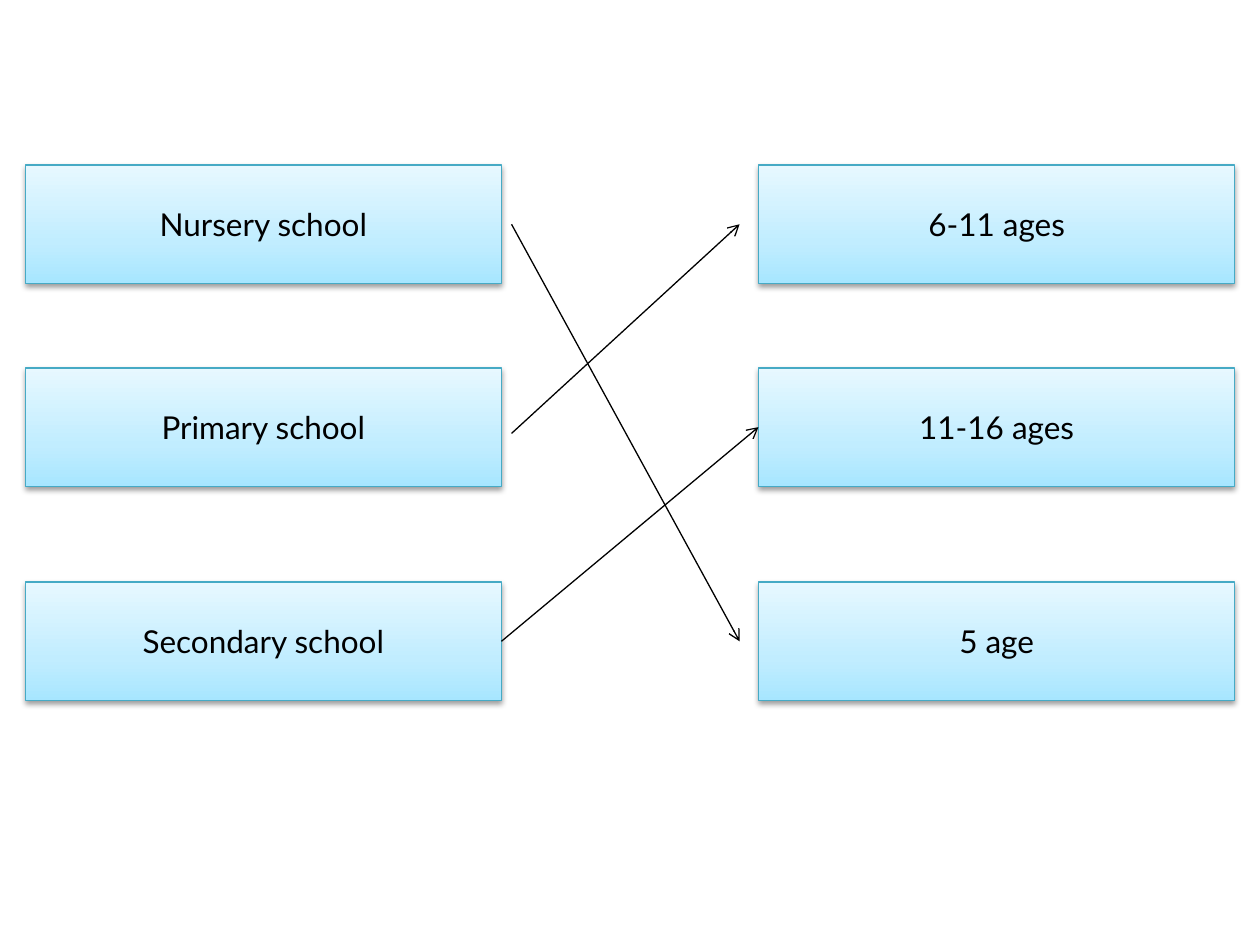
from lxml import etree
from pptx import Presentation
from pptx.dml.color import RGBColor
from pptx.enum.shapes import MSO_CONNECTOR, MSO_SHAPE
from pptx.enum.text import MSO_ANCHOR, PP_ALIGN
from pptx.oxml import parse_xml
from pptx.oxml.ns import nsdecls, qn
from pptx.util import Inches, Pt

RECT = MSO_SHAPE.RECTANGLE
STRAIGHT = MSO_CONNECTOR.STRAIGHT
MIDDLE = MSO_ANCHOR.MIDDLE
CENTER = PP_ALIGN.CENTER

COLORS = {"low": "A7E6FF", "mid": "C1EDFF", "high": "E7F8FF",
          "edge": "46AAC5", "ink": "000000"}
FONT = {"name": "Lato", "size": Pt(18)}
STOPS = {0: "low", 35: "mid", 100: "high"}

prs = Presentation()
prs.slide_width, prs.slide_height = Inches(10), Inches(7.5)
slide = prs.slides.add_slide(prs.slide_layouts[6])

# Box fill and shadow
stops = "".join(f'<a:gs pos="{pos * 1000}"><a:srgbClr val="{COLORS[key]}"/></a:gs>'
                for pos, key in STOPS.items())
FILL = (f'<a:gradFill {nsdecls("a")} rotWithShape="1"><a:gsLst>{stops}</a:gsLst>'
        '<a:lin ang="16200000" scaled="1"/></a:gradFill>')
SHADOW = (f'<a:effectLst {nsdecls("a")}>'
          '<a:outerShdw blurRad="40000" dist="20000" dir="5400000" rotWithShape="0">'
          f'<a:srgbClr val="{COLORS["ink"]}"><a:alpha val="38000"/></a:srgbClr>'
          '</a:outerShdw></a:effectLst>')


def set_line(item, key):
    item.line.color.rgb = RGBColor.from_string(COLORS[key])
    item.line.width = Pt(0.75)


# Schools on the left, ages on the right
tops = [1.31, 2.92, 4.62]
columns = {0.2: ["Nursery school", "Primary school", "Secondary school"],
           6.02: ["6-11 ages", "11-16 ages", "5 age"]}
for left, labels in columns.items():
    for top, label in zip(tops, labels):
        box = slide.shapes.add_shape(RECT, Inches(left), Inches(top),
                                     Inches(3.78), Inches(0.94))
        set_line(box, "edge")
        props = box.element.spPr
        props.find(qn("a:prstGeom")).addnext(parse_xml(FILL))
        props.append(parse_xml(SHADOW))
        frame = box.text_frame
        frame.vertical_anchor = MIDDLE
        para = frame.paragraphs[0]
        para.alignment = CENTER
        run = para.add_run()
        run.text = label
        for name, value in FONT.items():
            setattr(run.font, name, value)
        run.font.color.rgb = RGBColor.from_string(COLORS["ink"])

# Arrows from each school to its ages
arrows = [(4.06, 1.78, 5.87, 5.09),
          (4.06, 3.44, 5.87, 1.78),
          (3.98, 5.09, 6.02, 3.39)]
for ends in arrows:
    arrow = slide.shapes.add_connector(STRAIGHT, *map(Inches, ends))
    set_line(arrow, "ink")
    props = arrow.element.spPr
    etree.SubElement(props.find(qn("a:ln")), qn("a:tailEnd"), type="arrow")
    etree.SubElement(props, qn("a:effectLst"))

prs.save("out.pptx")
